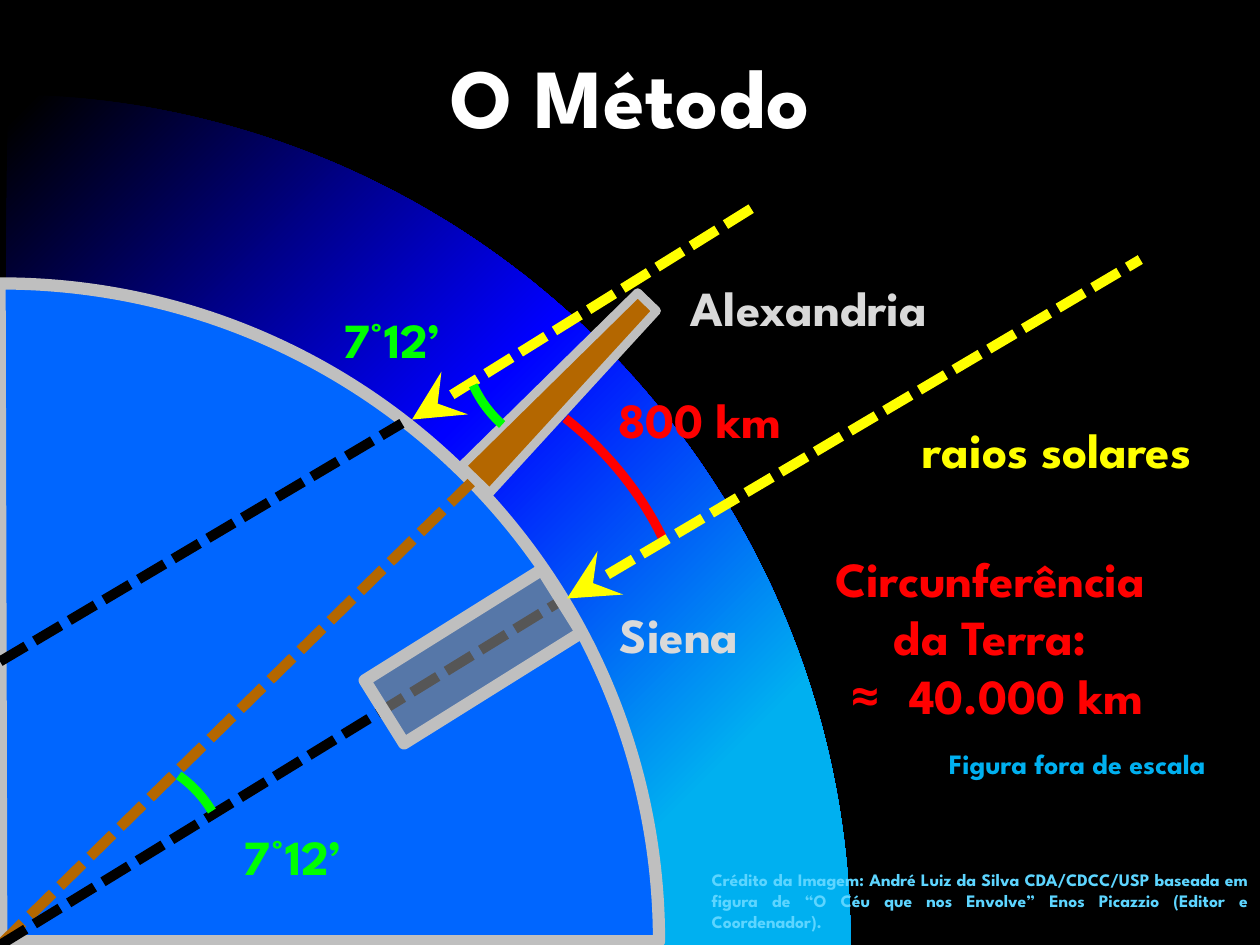
"""Build the slide on measuring the circumference of the Earth."""
from lxml import etree
from pptx import Presentation
from pptx.dml.color import RGBColor
from pptx.enum import dml, shapes, text
from pptx.oxml import parse_xml
from pptx.oxml.ns import nsdecls, qn
from pptx.util import Pt

PX = 9144
BLACK = RGBColor(0, 0, 0)
WHITE = RGBColor(255, 255, 255)
EARTH = RGBColor(0, 0x66, 0xFF)
NIGHT = RGBColor(0, 0, 255)
SKY = RGBColor(0, 0xB0, 0xF0)
PALE = RGBColor(0x5D, 0xD5, 0xFF)
RIM = RGBColor(0xBF, 0xBF, 0xBF)
LIGHT = RGBColor(0xD9, 0xD9, 0xD9)
GREY = RGBColor(0x80, 0x80, 0x80)
WOOD = RGBColor(0xB4, 0x67, 0)
GREEN = RGBColor(0, 255, 0)
RED = RGBColor(255, 0, 0)
YELLOW = RGBColor(255, 255, 0)
KIND = shapes.MSO_SHAPE
ALIGN = text.PP_ALIGN


class Deck:
    """Hold the style and the current slide."""

    font = "League Spartan"

    def __init__(self):
        self.prs = Presentation()
        self.prs.slide_width, self.prs.slide_height = 1000 * PX, 750 * PX
        self.slide = self.prs.slides.add_slide(self.prs.slide_layouts[5])
        fill = self.slide.background.fill
        fill.solid()
        fill.fore_color.rgb = BLACK

    def style(self, para, size, color, align=ALIGN.CENTER):
        para.alignment = align
        for run in para.runs:
            font = run.font
            font.name, font.size, font.bold = self.font, Pt(size), True
            font.color.rgb = color

    def title(self, words, x, y, w, h):
        box = self.slide.shapes.title
        box.left, box.top, box.width, box.height = (n * PX for n in (x, y, w, h))
        frame = box.text_frame
        frame.text = words
        frame.vertical_anchor = text.MSO_ANCHOR.TOP
        para = frame.paragraphs[0]
        para.space_before = Pt(10)
        self.style(para, 48, WHITE)

    def label(self, words, x, y, w, h, color, size=28, align=ALIGN.CENTER, wrap=True):
        box = self.slide.shapes.add_textbox(x * PX, y * PX, w * PX, h * PX)
        frame = box.text_frame
        frame.text = words
        frame.word_wrap = wrap
        frame.auto_size = text.MSO_AUTO_SIZE.SHAPE_TO_FIT_TEXT
        for para in frame.paragraphs:
            self.style(para, size, color, align)
        return frame

    def shape(self, kind, x, y, w, h, turn, adj, fill=None, line=None, width=0):
        item = self.slide.shapes.add_shape(kind, x * PX, y * PX, w * PX, h * PX)
        item.shadow.inherit = False
        item.rotation = turn
        for i, val in enumerate(adj):
            item.adjustments[i] = val
        if fill is None:
            item.fill.background()
        else:
            item.fill.solid()
            item.fill.fore_color.rgb = fill
        if line is None:
            item.line.fill.background()
        else:
            item.line.color.rgb = line
            item.line.width = Pt(width)
        return item

    def arc(self, x, y, w, h, turn, adj, color):
        item = self.shape(KIND.ARC, x, y, w, h, turn, adj, None, color, 5.25)
        item._element.spPr.get_or_add_xfrm().set("flipH", "1")

    def ray(self, x1, y1, x2, y2, color, width=5.75, head=False):
        item = self.slide.shapes.add_connector(
            shapes.MSO_CONNECTOR.STRAIGHT, x1 * PX, y1 * PX, x2 * PX, y2 * PX)
        item.line.color.rgb = color
        item.line.width = Pt(width)
        item.line.dash_style = dml.MSO_LINE.SQUARE_DOT
        prop = item._element.spPr
        if head:
            etree.SubElement(prop.find(qn("a:ln")), qn("a:headEnd"),
                             type="stealth", w="lg", len="lg")
        etree.SubElement(prop, qn("a:effectLst"))

    def fade(self, item, stops):
        marks = "".join(f'<a:gs pos="{pos * 1000}"><a:srgbClr val="{color}"/></a:gs>'
                        for pos, color in stops)
        grad = parse_xml(
            f'<a:gradFill {nsdecls("a")} rotWithShape="0"><a:gsLst>{marks}</a:gsLst>'
            '<a:path path="circle"><a:fillToRect l="100000" t="100000"/></a:path>'
            '</a:gradFill>')
        prop = item._element.spPr
        prop.replace(prop.find(qn("a:noFill")), grad)

    def veil(self, item, alpha):
        tint = item._element.spPr.find(qn("a:solidFill"))[0]
        etree.SubElement(tint, qn("a:alpha"), val=str(alpha * 1000))


def main():
    deck = Deck()
    air = deck.shape(KIND.PIE, -675, 75, 1350, 1350, 90, (108.31, 162))
    deck.fade(air, [(34, SKY), (52, NIGHT), (74, BLACK)])
    deck.title("O Método", 0, 30, 1000, 125)
    title = deck.slide.shapes.title._element
    air._element.addnext(title)
    deck.shape(KIND.PIE, -521, 225, 1044, 1044, 90, (107.91, 162), EARTH, RIM, 7)

    deck.ray(0, 750, 374, 383, WOOD, 6)
    deck.ray(0, 750, 445, 477, BLACK)
    deck.ray(0, 525, 319, 336, BLACK)
    deck.ray(327, 333, 602, 162, YELLOW, head=True)
    deck.shape(KIND.TRAPEZOID, 430, 212, 31, 196, 44, (0.165,), WOOD, RIM, 5)
    for x, y, turn in ((366, 172, 296.6), (-7, 600, 110)):
        deck.arc(x, y, 190, 187, turn, (193.13, 207.27), GREEN)
    well = deck.shape(KIND.TRAPEZOID, 346, 438, 59, 166, 238, (0,), GREY, RIM, 7)
    deck.veil(well, 68)
    deck.arc(17, 244, 511, 560, 103.6, (182.86, 198.64), RED)

    for x, y in ((169, 651), (248, 241)):
        deck.label("7°12’", x, y, 126, 57, GREEN)
    deck.label("800 km", 469, 304, 173, 57, RED)
    deck.label("Alexandria", 516, 215, 252, 57, LIGHT)
    deck.label("Siena", 413, 475, 252, 57, LIGHT)
    deck.ray(450, 475, 905, 206, YELLOW, head=True)
    sum_up = deck.label("Circunferência \nda Terra: \n≈ ", 602, 430, 378, 151, RED)
    last = sum_up.paragraphs[-1]
    last.add_run().text = "40.000 km"
    deck.style(last, 28, RED)
    last.runs[0].font.name = "Noto Sans Mono"
    deck.label("Figura fora de escala", 729, 588, 252, 37, SKY, 16, wrap=False)
    deck.label("raios solares", 705, 328, 268, 57, YELLOW)
    deck.label("Crédito da Imagem: André Luiz da Silva CDA/CDCC/USP baseada em "
               "figura de “O Céu que nos Envolve” Enos Picazzio "
               "(Editor e Coordenador). ", 555, 685, 445, 61, PALE, 10, ALIGN.JUSTIFY)
    deck.prs.save("out.pptx")


if __name__ == "__main__":
    main()
